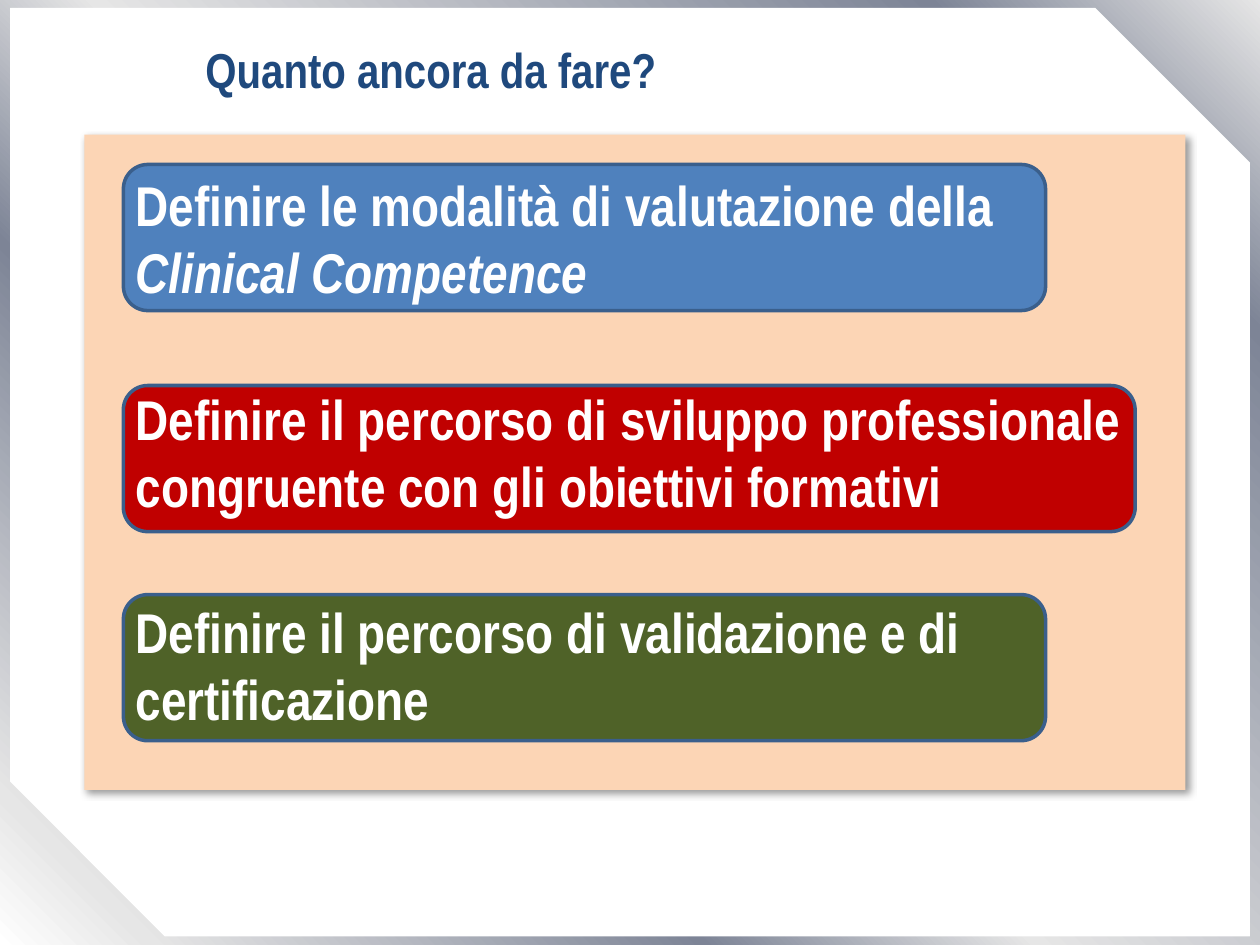
from lxml import etree
from pptx import Presentation
from pptx.dml.color import RGBColor
from pptx.enum import shapes, text
from pptx.oxml import ns
from pptx.util import Pt

FONT = "Arial Narrow"
COLORS = {
    "white": "FFFFFF", "silver": "E6E6E6", "steel": "7D8496", "peach": "FCD5B5",
    "blue": "4F81BD", "red": "C00000", "green": "4F6228", "outline": "3A5F8C",
    "navy": "1F497D", "cream": "EEECE1", "black": "000000",
}
BACKDROP_STOPS = [(0, "white"), (7, "silver"), (32, "steel"),
                  (47, "silver"), (85, "steel"), (100, "silver")]
GOALS = [
    ([("Definire le modalità di valutazione della ", False),
      ("Clinical Competence", True)], "blue", 17, 527, 0, 515.5),
    ([("Definire il percorso di sviluppo professionale congruente "
       "con gli obiettivi formativi", False)], "red", 143.3, 578.2, -4.3, 589.7),
    ([("Definire il percorso di validazione e di certificazione", False)],
     "green", 262.8, 527, -2.2, 515.5),
]


def rgb(name):
    return RGBColor.from_string(COLORS[name])


def add_child(parent, tag, **attributes):
    return etree.SubElement(parent, ns.qn(tag), attributes)


def add_shadow(properties, color, opacity, blur, distance):
    effects = add_child(properties, "a:effectLst")
    shadow = add_child(effects, "a:outerShdw", blurRad=str(Pt(blur)), dist=str(Pt(distance)),
                       dir="2700000", algn="tl", rotWithShape="0")
    shade = add_child(shadow, "a:srgbClr", val=COLORS[color])
    add_child(shade, "a:alpha", val=str(opacity * 1000))
    return effects


def add_panel(page, kind, box, fill, line=None):
    panel = page.shapes.add_shape(kind, *map(Pt, box))
    panel.fill.solid()
    panel.fill.fore_color.rgb = rgb(fill)
    if line:
        panel.line.color.rgb = rgb(line)
        panel.line.width = Pt(2)
    else:
        panel.line.fill.background()
    return panel


def write_text(holder, runs, size, color):
    frame = holder.text_frame
    frame.word_wrap = True
    frame.auto_size = text.MSO_AUTO_SIZE.SHAPE_TO_FIT_TEXT
    frame.vertical_anchor = text.MSO_ANCHOR.TOP
    para = frame.paragraphs[0]
    para.alignment = text.PP_ALIGN.LEFT
    para.font.name = FONT
    para.font.size = Pt(size)
    para.font.bold = True
    para.font.color.rgb = rgb(color)
    for words, italic in runs:
        span = para.add_run()
        span.text = words
        if italic:
            span.font.italic = True
    return para


def draw_backdrop(page, box):
    fill = page.background.fill
    fill.gradient()
    fill.gradient_angle = 45
    stops = page.background._cSld.find(".//" + ns.qn("a:gsLst"))
    for stop in list(stops):
        stops.remove(stop)
    for position, color in BACKDROP_STOPS:
        stop = add_child(stops, "a:gs", pos=str(position * 1000))
        add_child(stop, "a:srgbClr", val=COLORS[color])
    sheet = add_panel(page, shapes.MSO_SHAPE.SNIP_2_DIAG_RECTANGLE, box, "white")
    sheet.shadow.inherit = False


def draw_title(page, box):
    title = page.shapes.title
    title.left, title.top, title.width, title.height = map(Pt, box)
    page.shapes.element.append(title.element)
    para = write_text(title, [("Quanto ancora da fare?", False)], 28, "navy")
    properties = para.runs[0].font._element
    add_shadow(properties, "cream", 100, 3, 3)


def draw_goals(page, box):
    left, top, width, height = box
    board = add_panel(page, shapes.MSO_SHAPE.RECTANGLE, box, "peach")
    add_shadow(board.element.spPr, "black", 40, 4, 3)
    indent = 22.3
    for runs, color, offset, card_width, shift, text_width in GOALS:
        x, y = left + indent, top + offset
        card = add_panel(page, shapes.MSO_SHAPE.ROUNDED_RECTANGLE,
                         (x, y, card_width, 83.5), color, "outline")
        card.shadow.inherit = False
        label = page.shapes.add_textbox(*map(Pt, (x, y + shift, text_width, 85)))
        write_text(label, runs, 32, "white")


def main():
    deck = Presentation()
    deck.slide_width, deck.slide_height = Pt(720), Pt(540)
    page = deck.slides.add_slide(deck.slide_layouts[5])
    draw_backdrop(page, (5.8, 4.5, 708.5, 530.6))
    draw_goals(page, (48.2, 77, 629.3, 374.4))
    draw_title(page, (110.2, 18.7, 515.5, 41))
    deck.save("out.pptx")


if __name__ == "__main__":
    main()
